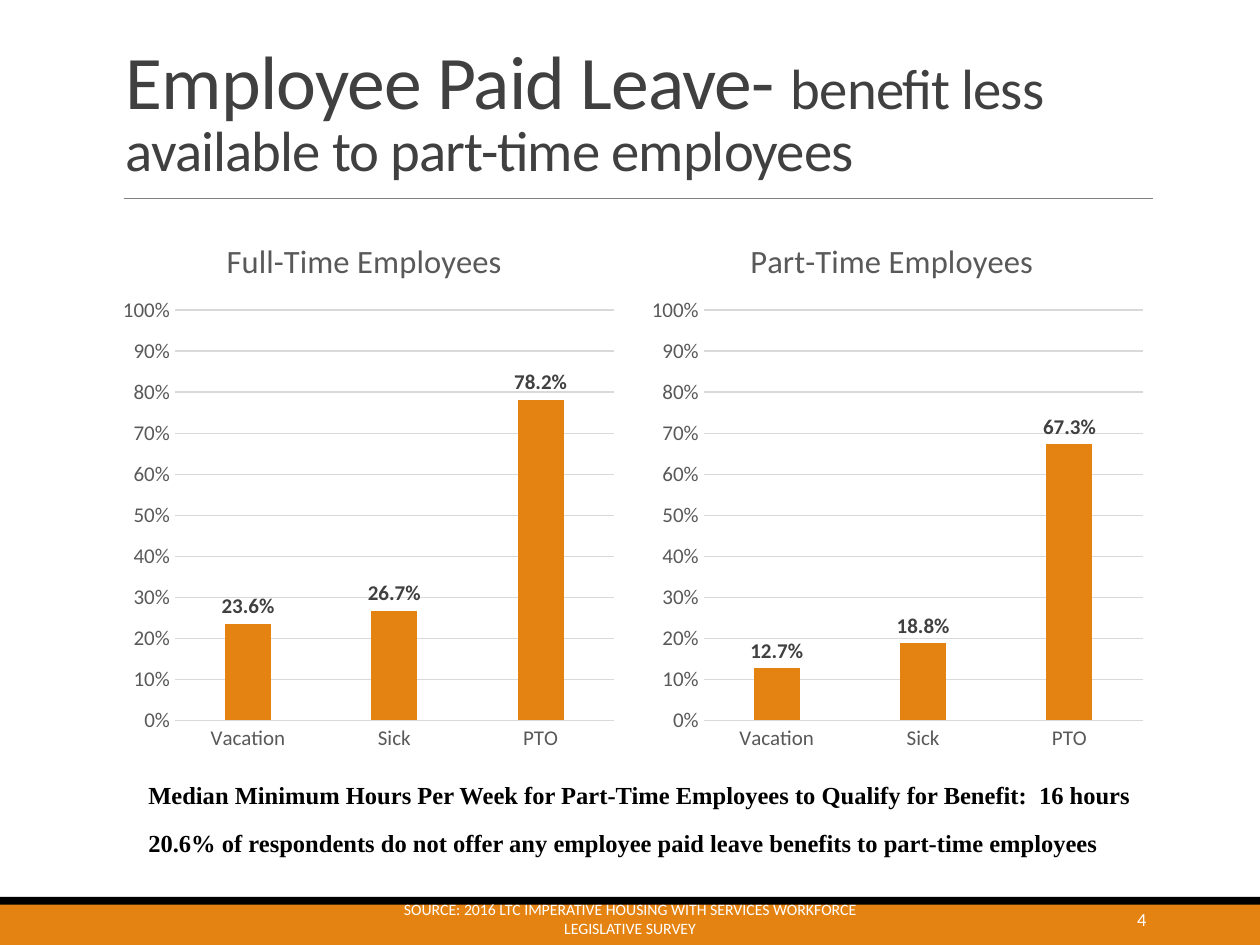
"""Build the slide on paid leave for full-time and part-time employees."""
import lxml.etree
import pptx
import pptx.chart.data
import pptx.dml.color
import pptx.enum.chart
import pptx.enum.shapes
import pptx.enum.text
import pptx.oxml.ns
import pptx.util

Cm, Pt = pptx.util.Cm, pptx.util.Pt
Rgb = pptx.dml.color.RGBColor.from_string
qn = pptx.oxml.ns.qn
Align, Anchor = pptx.enum.text.PP_ALIGN, pptx.enum.text.MSO_ANCHOR
Tick = pptx.enum.chart.XL_TICK_MARK

hues = {"orange": "E48312", "black": "000000", "white": "FFFFFF", "dark": "404040",
        "text": "595959", "rule": "808080", "grid": "D9D9D9"}


def style(font, size, hue, face="Calibri", bold=False):
    font.name, font.size, font.bold = face, Pt(size), bold
    font.color.rgb = Rgb(hues[hue])


def place(part, spot, inner=False, **frame):
    for old in part.findall(qn("c:layout")):
        part.remove(old)
    outer = lxml.etree.Element(qn("c:layout"))
    part.insert(spot, outer)
    layout = lxml.etree.SubElement(outer, qn("c:manualLayout"))
    pairs = [("layoutTarget", "inner")] if inner else []
    pairs += [("xMode", "edge"), ("yMode", "edge"), *frame.items()]
    for tag, val in pairs:
        lxml.etree.SubElement(layout, qn("c:" + tag)).set("val", str(val))


deck = pptx.Presentation()
deck.slide_width, deck.slide_height = Cm(25.4), Cm(19.05)
slide = deck.slides.add_slide(deck.slide_layouts[6])
shapes = slide.shapes

for top, high, hue in [(18.11, 0.94, "orange"), (18.08, 0.16, "black")]:
    band = shapes.add_shape(pptx.enum.shapes.MSO_SHAPE.RECTANGLE,
                            Cm(0), Cm(top), Cm(25.4), Cm(high))
    band.shadow.inherit = False
    band.fill.solid()
    band.fill.fore_color.rgb = Rgb(hues[hue])
    band.line.fill.background()

rule = shapes.add_connector(pptx.enum.shapes.MSO_CONNECTOR.STRAIGHT,
                            Cm(2.49), Cm(4.01), Cm(23.24), Cm(4.01))
rule.line.color.rgb = Rgb(hues["rule"])
rule.line.width = Pt(0.5)
lxml.etree.SubElement(rule._element.spPr, qn("a:effectLst"))

frame = shapes.add_textbox(Cm(2.29), Cm(0.79), Cm(20.96), Cm(3.02)).text_frame
frame.word_wrap = True
frame.vertical_anchor = Anchor.BOTTOM
para = frame.paragraphs[0]
para.line_spacing = 0.85
for words, size in [("Employee Paid Leave- ", 43.2),
                    ("benefit less available to part-time employees", 32.4)]:
    run = para.add_run()
    run.text = words
    style(run.font, size, "dark")
    run.font._element.set("spc", "-50")

charts = [("Full-Time Employees", 2.29, 0.21, (0.236, 0.267, 0.782)),
          ("Part-Time Employees", 12.95, 0.2, (0.127, 0.188, 0.673))]
for name, left, shift, vals in charts:
    data = pptx.chart.data.CategoryChartData()
    data.categories = ["Vacation", "Sick", "PTO"]
    data.add_series("Series 1", vals)
    chart = shapes.add_chart(pptx.enum.chart.XL_CHART_TYPE.COLUMN_CLUSTERED,
                             Cm(left), Cm(4.24), Cm(10.29), Cm(11.18), data).chart
    style(chart.font, 10, "black")
    chart.has_legend = False
    chart.has_title = True
    head = chart.chart_title
    head.text_frame.text = name
    style(head.text_frame.paragraphs[0].font, 18.6, "text")
    place(head._element, 1, x=shift, y=0.04)
    place(chart._chartSpace.chart.plotArea, 0, inner=True,
          x=0.12, y=0.18, w=0.86, h=0.74)

    for axis in (chart.category_axis, chart.value_axis):
        axis.major_tick_mark = axis.minor_tick_mark = Tick.NONE
        style(axis.tick_labels.font, 12, "text")
    base, scale = chart.category_axis, chart.value_axis
    base.format.line.color.rgb = Rgb(hues["grid"])
    base.format.line.width = Pt(0.75)
    scale.format.line.fill.background()
    scale.minimum_scale, scale.maximum_scale, scale.major_unit = 0, 1, 0.1
    scale.tick_labels.number_format = "0%"
    scale.tick_labels.number_format_is_linked = False
    grid = scale.major_gridlines.format.line
    grid.color.rgb = Rgb(hues["grid"])
    grid.width = Pt(0.75)

    plot = chart.plots[0]
    plot.vary_by_categories = False
    plot.gap_width, plot.overlap = 219, -27
    bars = plot.series[0]
    bars.format.fill.solid()
    bars.format.fill.fore_color.rgb = Rgb(hues["orange"])
    tags = bars.data_labels
    tags.show_value = True
    tags.number_format = "0.0%"
    tags.number_format_is_linked = False
    tags.position = pptx.enum.chart.XL_LABEL_POSITION.OUTSIDE_END
    style(tags.font, 12, "dark", bold=True)

notes = ["Median Minimum Hours Per Week for Part-Time Employees to Qualify for Benefit:  16 hours",
         "20.6% of respondents do not offer any employee paid leave benefits to part-time employees"]
for row, words in enumerate(notes):
    frame = shapes.add_textbox(Cm(2.74), Cm(15.6 + 0.97 * row), Cm(20.4), Cm(0.86)).text_frame
    frame.word_wrap = False
    frame.text = words
    style(frame.paragraphs[0].font, 14, "black", "Times New Roman", True)

feet = [("4", 20.62, 2.74, 10.5, Align.RIGHT),
        ("SOURCE: 2016 LTC IMPERATIVE HOUSING WITH SERVICES WORKFORCE LEGISLATIVE SURVEY",
         7.67, 10.06, 9, Align.CENTER)]
for words, left, wide, size, align in feet:
    frame = shapes.add_textbox(Cm(left), Cm(18.11), Cm(wide), Cm(0.84)).text_frame
    frame.word_wrap = True
    frame.vertical_anchor = Anchor.MIDDLE
    frame.text = words
    para = frame.paragraphs[0]
    para.alignment = align
    style(para.font, size, "white")

deck.save("out.pptx")
